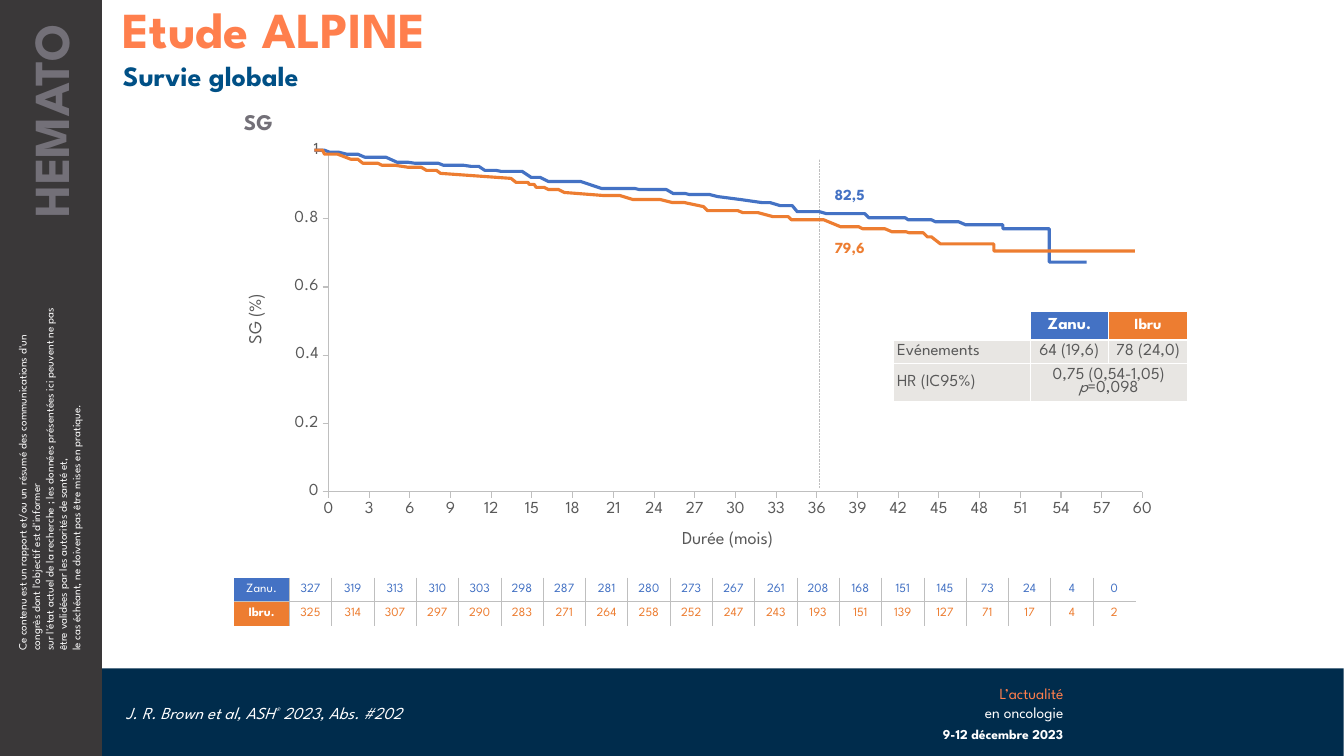
import pptx
import pptx.chart.data
import pptx.dml.color
import pptx.enum.chart
import pptx.enum.dml
import pptx.enum.shapes
import pptx.enum.text
import pptx.oxml
import pptx.oxml.ns
import pptx.util
from lxml import etree

PX = 9144
FONT = "League Spartan"
COLORS = {
    "navy": "002C4C", "charcoal": "3A3839", "white": "FFFFFF", "coral": "FF7F4D",
    "grey": "737078", "title_blue": "005086", "zanu": "4472C4", "ibru": "ED7D31",
    "rule": "BFBFBF", "text": "595959", "cell": "E8E6E3", "black": "000000",
}
ALIGN = {name[0].lower(): getattr(pptx.enum.text.PP_ALIGN, name) for name in ("LEFT", "CENTER", "RIGHT")}
ANCHOR = {"t": pptx.enum.text.MSO_ANCHOR.TOP, "m": pptx.enum.text.MSO_ANCHOR.MIDDLE}
qn = pptx.oxml.ns.qn


class Deck:
    """Holds the style and the current slide, and draws each kind of element."""

    def __init__(self):
        self.prs = pptx.Presentation()
        self.prs.slide_width, self.prs.slide_height = 12192000, 6858000
        self.s = self.prs.slides.add_slide(self.prs.slide_layouts[4])

    def px(self, *values):
        return [round(v * PX) for v in values]

    def rgb(self, name):
        return pptx.dml.color.RGBColor.from_string(COLORS[name])

    def font(self, font, size, color, **fmt):
        values = {"name": FONT, "size": pptx.util.Pt(size), "bold": False, "italic": False, **fmt}
        for key, value in values.items():
            setattr(font, key, value)
        font.color.rgb = self.rgb(color)

    def stroke(self, line, color, width):
        line.color.rgb = self.rgb(color)
        line.width = pptx.util.Pt(width)

    def fill_text(self, tf, paragraphs, size, color, align="l", spacing=None, **fmt):
        for i, runs in enumerate(paragraphs):
            p = tf.add_paragraph() if i else tf.paragraphs[0]
            p.alignment = ALIGN[align]
            p.space_before = pptx.util.Pt(0)
            if spacing:
                p.line_spacing = spacing
            for text, extra in runs:
                extra = dict(extra)
                baseline = extra.pop("baseline", None)
                for j, part in enumerate(text.split("\n")):
                    if j:
                        p.add_line_break()
                    r = p.add_run()
                    r.text = part
                    self.font(r.font, **{"size": size, "color": color, **fmt, **extra})
                    if baseline:
                        r.font._element.set("baseline", baseline)

    def frame(self, tf, insets, anchor="t"):
        tf.word_wrap = True
        tf.auto_size = pptx.enum.text.MSO_AUTO_SIZE.NONE
        tf.vertical_anchor = ANCHOR[anchor]
        for side, inset in zip(("left", "top", "right", "bottom"), self.px(*insets)):
            setattr(tf, f"margin_{side}", inset)

    def text(self, box, paragraphs, size, color, insets=(10, 5, 10, 5), anchor="t", rotation=0, **fmt):
        sp = self.s.shapes.add_textbox(*self.px(*box))
        sp.rotation = rotation
        self.frame(sp.text_frame, insets, anchor)
        self.fill_text(sp.text_frame, paragraphs, size, color, **fmt)

    def placeholder(self, idx, box, paragraphs, size, color, insets=(10, 5, 10, 5), anchor="t", fill=None, **fmt):
        sp = self.s.placeholders[idx]
        sp.left, sp.top, sp.width, sp.height = self.px(*box)
        sp.element.getparent().append(sp.element)
        if fill:
            sp.fill.solid()
            sp.fill.fore_color.rgb = self.rgb(fill)
        self.frame(sp.text_frame, insets, anchor)
        pPr = sp.text_frame.paragraphs[0]._p.get_or_add_pPr()
        pPr.set("marL", "0")
        pPr.set("indent", "0")
        etree.SubElement(pPr, qn("a:buNone"))
        self.fill_text(sp.text_frame, paragraphs, size, color, spacing=0.9, **fmt)

    def rect(self, box, fill):
        sp = self.s.shapes.add_shape(pptx.enum.shapes.MSO_SHAPE.RECTANGLE, *self.px(*box))
        sp.shadow.inherit = False
        sp.fill.solid()
        sp.fill.fore_color.rgb = self.rgb(fill)
        sp.line.fill.background()

    def dotted_line(self, ends, color, width):
        sp = self.s.shapes.add_connector(pptx.enum.shapes.MSO_CONNECTOR.STRAIGHT, *self.px(*ends))
        self.stroke(sp.line, color, width)
        sp.line.dash_style = pptx.enum.dml.MSO_LINE.ROUND_DOT
        etree.SubElement(sp.element.spPr, qn("a:effectLst"))

    def curve(self, points, color):
        builder = self.s.shapes.build_freeform(*points[0], scale=PX)
        builder.add_line_segments(points[1:], close=False)
        sp = builder.convert_to_shape()
        sp.shadow.inherit = False
        sp.fill.background()
        self.stroke(sp.line, color, 2.25)

    def table(self, left, top, widths, heights):
        shape = self.s.shapes.add_table(len(heights), len(widths), *self.px(left, top, sum(widths), sum(heights)))
        table = shape.table
        table.first_row = table.horz_banding = False
        for col, width in zip(table.columns, self.px(*widths)):
            col.width = width
        for row, height in zip(table.rows, self.px(*heights)):
            row.height = height
        return table

    def cell(self, cell, paragraphs, size, color, fill, borders, inset, align="c", **fmt):
        for side in ("left", "top", "right", "bottom"):
            setattr(cell, f"margin_{side}", self.px(inset)[0])
        cell.vertical_anchor = ANCHOR["m"]
        self.fill_text(cell.text_frame, paragraphs, size, color, align, **fmt)
        if not paragraphs:
            etree.SubElement(cell.text_frame.paragraphs[0]._p, qn("a:endParaRPr"), sz=str(size * 100))
        if fill:
            cell.fill.solid()
            cell.fill.fore_color.rgb = self.rgb(fill)
        else:
            cell.fill.background()
        tcPr = cell._tc.get_or_add_tcPr()
        for i, side in enumerate("LRTB"):
            color, width = borders.get(side, (None, 0))
            ln = etree.Element(qn(f"a:ln{side}"), w=str(int(pptx.util.Pt(width))))
            paint = etree.SubElement(ln, qn("a:solidFill" if color else "a:noFill"))
            if color:
                etree.SubElement(paint, qn("a:srgbClr"), val=COLORS[color])
            tcPr.insert(i, ln)

    def layout(self, parent, **values):
        layout = parent.find(qn("c:layout"))
        if layout is None:
            layout = etree.Element(qn("c:layout"))
            parent.insert(len(parent.findall(qn("c:tx"))), layout)
        manual = etree.SubElement(layout, qn("c:manualLayout"))
        if "w" in values:
            etree.SubElement(manual, qn("c:layoutTarget"), val="inner")
        for key in "xy":
            etree.SubElement(manual, qn(f"c:{key}Mode"), val="edge")
        for key, value in values.items():
            etree.SubElement(manual, qn(f"c:{key}"), val=str(value))

    def axis(self, axis, title, top, step, place):
        axis.minimum_scale, axis.maximum_scale, axis.major_unit = 0, top, step
        axis.has_major_gridlines = False
        axis.major_tick_mark = pptx.enum.chart.XL_TICK_MARK.OUTSIDE
        axis.minor_tick_mark = pptx.enum.chart.XL_TICK_MARK.NONE
        axis.tick_labels.number_format = "General"
        axis.tick_labels.number_format_is_linked = False
        self.font(axis.tick_labels.font, 12, "text")
        self.stroke(axis.format.line, "rule", 0.75)
        self.fill_text(axis.axis_title.text_frame, [[(title, {})]], 13, "text", "c")
        self.layout(axis.axis_title._element, **place)

    def survival_axes(self, box):
        data = pptx.chart.data.XyChartData()
        data.add_series("Series 1").add_data_point(0.7, 2.7)
        kind = pptx.enum.chart.XL_CHART_TYPE.XY_SCATTER
        chart = self.s.shapes.add_chart(kind, *self.px(*box), data).chart
        chart.has_legend = chart.has_title = False
        self.font(chart.font, 10, "black")
        chart.plots[0].vary_by_categories = False
        series = chart.plots[0].series[0]
        series.smooth = False
        series.marker.style = pptx.enum.chart.XL_MARKER_STYLE.CIRCLE
        series.marker.size = 5
        for part in (series.format.line.fill, series.marker.format.fill, series.marker.format.line.fill):
            part.background()
        self.axis(chart.category_axis, "Durée (mois)", 60, 3, {"x": 0.47, "y": 0.9})
        self.axis(chart.value_axis, "SG (%)", 1, 0.2, {"x": 0.01, "y": 0.36})
        self.layout(chart._chartSpace.chart.plotArea, x=0.1, y=0.04, w=0.86, h=0.78)


ZANU_CURVE = [(312, 149), (322, 149), (327, 151), (336, 151), (344, 153), (355, 153), (362, 156), (383, 156), (394, 161), (405, 161), (412, 162), (435, 162), (440, 164), (460, 164), (467, 165), (475, 165), (481, 169), (492, 169), (497, 170), (518, 170), (527, 176), (536, 176), (544, 180), (576, 180), (597, 187), (630, 187), (634, 188), (661, 188), (668, 192), (680, 192), (684, 193), (704, 193), (712, 195), (735, 198), (756, 201), (764, 201), (774, 204), (786, 204), (791, 210), (813, 210), (820, 212), (858, 212), (862, 216), (898, 216), (901, 218), (924, 218), (928, 220), (951, 220), (958, 223), (995, 223), (995, 227), (1041, 227), (1041, 260), (1078, 260)]
IBRU_CURVE = [(312, 149), (320, 149), (322, 153), (335, 153), (348, 158), (355, 158), (360, 162), (375, 162), (379, 164), (392, 164), (405, 166), (418, 166), (423, 169), (433, 169), (437, 172), (507, 177), (512, 181), (524, 181), (525, 183), (530, 183), (532, 186), (540, 186), (544, 188), (554, 188), (560, 191), (599, 194), (615, 194), (628, 198), (655, 198), (667, 201), (679, 201), (698, 205), (702, 209), (732, 209), (737, 211), (752, 211), (767, 215), (782, 215), (785, 218), (817, 218), (834, 225), (852, 225), (856, 227), (878, 227), (885, 230), (899, 230), (902, 231), (916, 231), (920, 235), (924, 235), (933, 242), (986, 242), (986, 249), (1126, 249)]
AT_RISK = [
    ("Zanu.", "zanu", [327, 319, 313, 310, 303, 298, 287, 281, 280, 273, 267, 261, 208, 168, 151, 145, 73, 24, 4, 0]),
    ("Ibru.", "ibru", [325, 314, 307, 297, 290, 283, 271, 264, 258, 252, 247, 243, 193, 151, 139, 127, 71, 17, 4, 2]),
]
DISCLAIMER = "Ce contenu est un rapport et/ou un résumé des communications d'un congrès dont l'objectif est d'informer\nsur l'état actuel de la recherche ; les données présentées ici peuvent ne pas être validées par les autorités de santé et,\nle cas échéant, ne doivent pas être mises en pratique."


def main():
    d = Deck()
    d.rect((101, 663, 1232, 87), "navy")
    d.rect((0, 0, 101, 750), "charcoal")
    d.text((-131, 437, 360, 77), [[(DISCLAIMER, {})]], 8, "white", rotation=270)
    d.text((901, 674, 164, 47), [[("L’actualité\n", {}), ("en oncologie", {"color": "white"})]], 11, "coral", align="r")
    d.text((-104, 118, 307, 71), [[("HEMATO", {})]], 36, "grey", (10, 5, 24, 5), rotation=270, align="r", bold=True)

    d.placeholder(4, (901, 717, 154, 27), [[("9-12 décembre 2023", {})]], 9.7, "white", (10, 5, 0, 5), align="r", bold=True)
    citation = [("J. R. Brown et al, ASH", {}), ("®", {"baseline": "30000"}), (" 2023, Abs. #202", {})]
    d.placeholder(3, (111, 694, 564, 27), [citation], 12, "white", (14, 5, 10, 5), italic=True)
    d.placeholder(0, (102, 0, 1231, 57), [[("Etude ALPINE", {})]], 36, "coral", (20, 5, 10, 5), bold=True)
    d.placeholder(1, (102, 57, 1231, 37), [[("Survie globale", {})]], 20, "title_blue", (20, 5, 10, 5), bold=True)
    d.placeholder(2, (232, 101, 59, 42), [[("SG", {})]], 16, "grey", anchor="m", fill="white", bold=True)

    d.survival_axes((232, 132, 939, 434))

    risk = d.table(232, 573, [55] + [42] * 20, [24, 24])
    grey, white, thin = ("rule", 0.5), ("white", 0.5), ("white", 0.25)
    for i, (name, color, counts) in enumerate(AT_RISK):
        for j, value in enumerate([name] + counts):
            borders = {"R": thin if j == 20 else grey, "B": white if i else grey}
            borders.update({"L": grey} if j else {})
            borders.update({"T": grey} if i else {})
            ink, fill = (color, None) if j else ("white", color)
            d.cell(risk.cell(i, j), [[(str(value), {})]], 9, ink, fill, borders, 0, bold=i == 1 and j == 0)

    results = d.table(886, 309, [136, 78, 78], [23, 23, 38])
    results.cell(2, 1).merge(results.cell(2, 2))
    heads = [("Zanu.", "zanu", 12), ("Ibru", "ibru", 11)]
    cells = [(0, 0, [], 12, "text", None)]
    cells += [(0, j, [[(name, {"bold": True})]], size, "white", fill) for j, (name, fill, size) in enumerate(heads, 1)]
    body = [(1, 0, "Evénements"), (1, 1, "64 (19,6)"), (1, 2, "78 (24,0)"), (2, 0, "HR (IC95%)")]
    cells += [(i, j, [[(text, {})]], 12, "text", "cell") for i, j, text in body]
    hazard = [[("0,75 (0,54-1,05)", {})], [("p", {"italic": True}), ("=0,098", {})]]
    cells.append((2, 1, hazard, 12, "text", "cell"))
    frame = dict.fromkeys("LRTB", ("white", 1))
    for i, j, paragraphs, size, ink, fill in cells:
        align = "c" if j else "l"
        d.cell(results.cell(i, j), paragraphs, size, ink, fill, frame, 4, align, spacing=0.8)

    d.dotted_line((813, 484, 813, 158), "rule", 0.5)
    for top, rate, color, points in ((179, "82,5", "zanu", ZANU_CURVE), (232, "79,6", "ibru", IBRU_CURVE)):
        d.text((828, top, 47, 27), [[(rate, {})]], 11, color, (0, 0, 0, 0), "m", bold=True)
        d.curve(points, color)
    d.prs.save("out.pptx")


if __name__ == "__main__":
    main()
